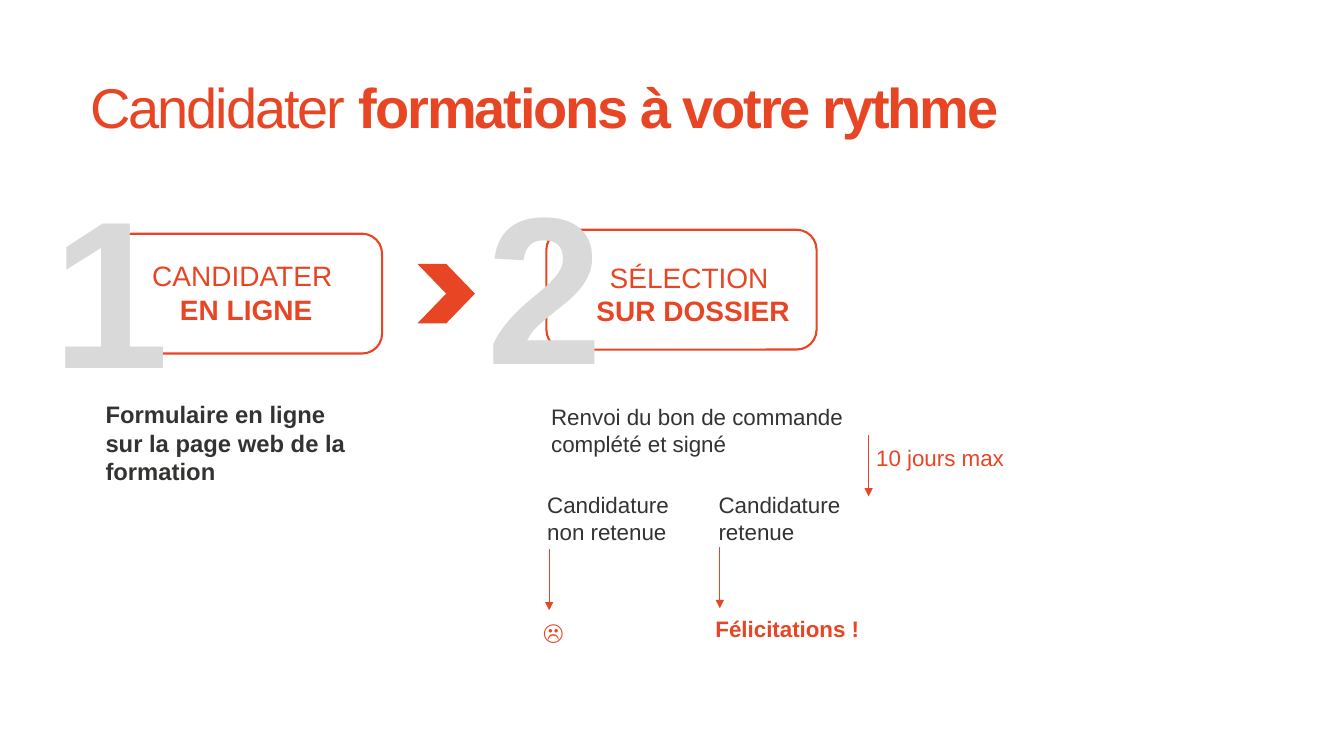
from pptx import Presentation
from pptx.dml.color import RGBColor
from pptx.enum.shapes import MSO_CONNECTOR, MSO_SHAPE
from pptx.enum.text import MSO_ANCHOR, MSO_AUTO_SIZE, PP_ALIGN
from pptx.oxml.ns import qn
from pptx.util import Cm, Pt
from lxml import etree

ORANGE = RGBColor(0xE8, 0x45, 0x25)
DARK = RGBColor(0x33, 0x33, 0x31)
GREY = RGBColor(0xD9, 0xD9, 0xD9)
WHITE = RGBColor(0xFF, 0xFF, 0xFF)
FONT = "Arial"
LEFT, CENTER = PP_ALIGN.LEFT, PP_ALIGN.CENTER
TOP, MIDDLE = MSO_ANCHOR.TOP, MSO_ANCHOR.MIDDLE
NO_FIT, GROW = MSO_AUTO_SIZE.NONE, MSO_AUTO_SIZE.SHAPE_TO_FIT_TEXT
ROUNDED, CHEVRON = MSO_SHAPE.ROUNDED_RECTANGLE, MSO_SHAPE.CHEVRON
RECTANGLE, STRAIGHT = MSO_SHAPE.RECTANGLE, MSO_CONNECTOR.STRAIGHT


def lengths(values):
    """Turn centimetre numbers into lengths."""
    return [Cm(value) for value in values]


def write(shape, spans, size, color, align=LEFT, spacing=None, anchor=TOP, fit=NO_FIT):
    """Write one paragraph of (text, bold) spans; a newline breaks the line."""
    frame = shape.text_frame
    layout = {"word_wrap": True, "auto_size": fit, "vertical_anchor": anchor}
    for name, value in layout.items():
        setattr(frame, name, value)
    para = frame.paragraphs[0]
    para.alignment, para.line_spacing = align, spacing
    for text, bold in spans:
        span = para.add_run()
        span.text = text.rstrip("\n")
        for name, value in {"name": FONT, "size": Pt(size), "bold": bold}.items():
            setattr(span.font, name, value)
        span.font.color.rgb = color
        if text.endswith("\n"):
            para.add_line_break()
    return para


def add_title(page, spans):
    """Place and fill the title placeholder with tight lettering."""
    title = page.shapes.title
    title.left, title.top, title.width, title.height = lengths((2.03, 1.88, 25.86, 2.31))
    para = write(title, spans, 40, ORANGE, spacing=0.9)
    for span in para.runs:
        span.font._element.set("spc", "-150")


def add_text(page, place, spans, size=16, color=DARK, **options):
    """Add a wrapping text box."""
    box = page.shapes.add_textbox(*lengths(place))
    write(box, spans, size, color, **options)


def add_note(page, place, text, color=DARK, bold=False, align=LEFT):
    """Add a short remark of the selection flow."""
    add_text(page, place, [(text, bold)], color=color, align=align, spacing=1.01)


def add_shape(page, kind, place, fill=None, line=None):
    """Add a flat preset shape with an optional fill and outline."""
    shape = page.shapes.add_shape(kind, *lengths(place))
    shape.shadow.inherit = False
    for part, color in ((shape.fill, fill), (shape.line.fill, line)):
        if color is None:
            part.background()
        else:
            part.solid()
            part.fore_color.rgb = color
    if line is not None:
        shape.line.width = Pt(1.5)
    return shape


def add_down_arrow(page, x, top, length):
    """Add a thin vertical line with a triangle at its lower end."""
    arrow = page.shapes.add_connector(STRAIGHT, *lengths((x, top, x, top + length)))
    arrow.line.color.rgb = ORANGE
    arrow.line.width = Pt(0.75)
    etree.SubElement(arrow.line._get_or_add_ln(), qn("a:tailEnd"), type="triangle")
    etree.SubElement(arrow._element.spPr, qn("a:effectLst"))


def add_step(page, number, left, top, label_place, name, detail):
    """Add a rounded card with its label and big overlapping number."""
    add_shape(page, ROUNDED, (left, top, 6.81, 3.02), line=ORANGE)
    add_text(page, (left - 1.75, top - 2.03, 5.84, 6.68), [(number, True)],
             150, GREY, fit=GROW)
    add_text(page, (*label_place, 6.83, 1.96), [(name + " \n", False), (detail, True)],
             20, ORANGE, align=CENTER, fit=GROW)


def main():
    """Build the application steps slide."""
    deck = Presentation()
    deck.slide_width, deck.slide_height = Cm(33.87), Cm(19.05)
    page = deck.slides.add_slide(deck.slide_layouts[5])

    add_title(page, [("Candidater ", False), ("formations à votre rythme", True)])

    form = add_shape(page, RECTANGLE, (2.41, 9.8, 6.99, 2.72), fill=WHITE)
    write(form, [("Formulaire en ligne sur la page web de la formation", True)],
          17, DARK, anchor=MIDDLE)

    add_step(page, "1", 2.82, 5.89, (2.79, 6.4), "CANDIDATER", "EN LIGNE")
    add_shape(page, CHEVRON, (10.52, 6.65, 1.45, 1.5), fill=ORANGE)
    add_step(page, "2", 13.77, 5.79, (14.05, 6.43), "SÉLECTION", "SUR DOSSIER")

    add_note(page, (13.64, 10.03, 7.98, 1.4), "Renvoi du bon de commande complété et signé")
    add_note(page, (21.29, 11.07, 4.8, 0.84), "10 jours max", ORANGE, align=CENTER)
    add_note(page, (13.54, 12.24, 3.86, 1.4), "Candidature non retenue")
    add_note(page, (17.86, 12.24, 3.68, 1.4), "Candidature retenue")
    add_note(page, (13.44, 15.44, 1.07, 0.84), "☹", ORANGE)
    add_note(page, (17.78, 15.37, 4.8, 0.84), "Félicitations !", ORANGE, bold=True)

    for x, top in ((21.89, 10.97), (13.84, 13.84), (18.14, 13.79)):
        add_down_arrow(page, x, top, 1.54)

    deck.save("out.pptx")


main()
